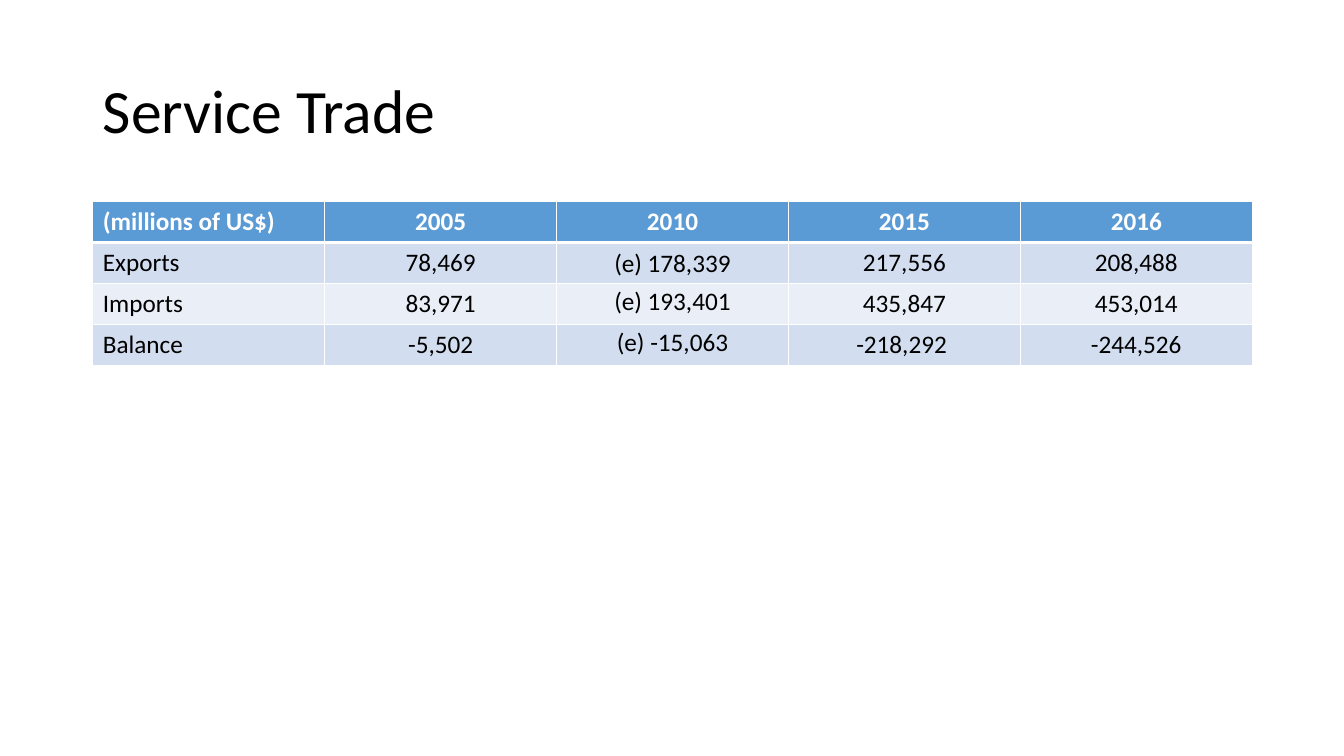
from lxml.etree import SubElement
from pptx import Presentation
from pptx.dml.color import RGBColor
from pptx.enum.text import MSO_ANCHOR, PP_ALIGN
from pptx.oxml.ns import qn
from pptx.util import Inches, Pt

COLORS = {
    "header": "5B9BD5",
    "odd": "D2DEEF",
    "even": "EAEFF7",
    "border": "FFFFFF",
    "header_text": "FFFFFF",
    "text": "000000",
}
FONT = "Calibri"
TRADE = [
    ["(millions of US$)", "2005", "2010", "2015", "2016"],
    ["Exports", "78,469", "(e) 178,339", "217,556", "208,488"],
    ["Imports", "83,971", "(e) 193,401", "435,847", "453,014"],
    ["Balance", "-5,502", "(e) -15,063", "-218,292 ", "-244,526"],
]
ROW_HEIGHT = Inches(1.62 / len(TRADE))


def format_paragraph(paragraph, size, color, bold, alignment):
    paragraph.alignment = alignment
    paragraph.font.name = FONT
    paragraph.font.size = Pt(size)
    paragraph.font.bold = bold
    paragraph.font.color.rgb = RGBColor.from_string(COLORS[color])


def add_title(slide, text, left, top, width, height):
    title = slide.shapes.title
    title.left, title.top, title.width, title.height = left, top, width, height
    frame = title.text_frame
    frame.text = text
    frame.word_wrap = True
    frame.vertical_anchor = MSO_ANCHOR.MIDDLE
    paragraph = frame.paragraphs[0]
    paragraph.line_spacing = 0.9
    format_paragraph(paragraph, 44, "text", False, PP_ALIGN.LEFT)


def add_borders(cell, top_width, bottom_width):
    properties = cell._tc.get_or_add_tcPr()
    widths = {"lnL": 1, "lnR": 1, "lnT": top_width, "lnB": bottom_width}
    for side, width in widths.items():
        line = SubElement(properties, qn(f"a:{side}"), w=str(Pt(width)))
        fill = SubElement(line, qn("a:solidFill"))
        SubElement(fill, qn("a:srgbClr"), val=COLORS["border"])


def format_cell(cell, text, row, column):
    header = row == 0
    add_borders(cell, 3 if row == 1 else 1, 3 if header else 1)
    band = "header" if header else "odd" if row % 2 else "even"
    cell.fill.solid()
    cell.fill.fore_color.rgb = RGBColor.from_string(COLORS[band])
    cell.text = text
    format_paragraph(
        cell.text_frame.paragraphs[0],
        18,
        "header_text" if header else "text",
        header,
        PP_ALIGN.CENTER if column else PP_ALIGN.LEFT,
    )
    if text.startswith("(e)"):
        cell.vertical_anchor = MSO_ANCHOR.MIDDLE
        cell.margin_left = cell.margin_right = cell.margin_top = Inches(0.01)
        cell.margin_bottom = Inches(0 if row == 1 else 0.05)


def add_trade_table(slide, left, top, width):
    row_count, column_count = len(TRADE), len(TRADE[0])
    frame = slide.shapes.add_table(
        row_count, column_count, left, top, width, ROW_HEIGHT * row_count
    )
    table = frame.table
    for table_column in table.columns:
        table_column.width = width // column_count
    for row, values in enumerate(TRADE):
        table.rows[row].height = ROW_HEIGHT
        for column, text in enumerate(values):
            format_cell(table.cell(row, column), text, row, column)


def main():
    presentation = Presentation()
    presentation.slide_width = Inches(13.33)
    presentation.slide_height = Inches(7.5)
    slide = presentation.slides.add_slide(presentation.slide_layouts[5])
    left, width = Inches(0.92), Inches(11.5)
    add_title(slide, "Service Trade", left, Inches(0.4), width, Inches(1.45))
    add_trade_table(slide, left, Inches(2), width)
    presentation.save("out.pptx")


if __name__ == "__main__":
    main()
